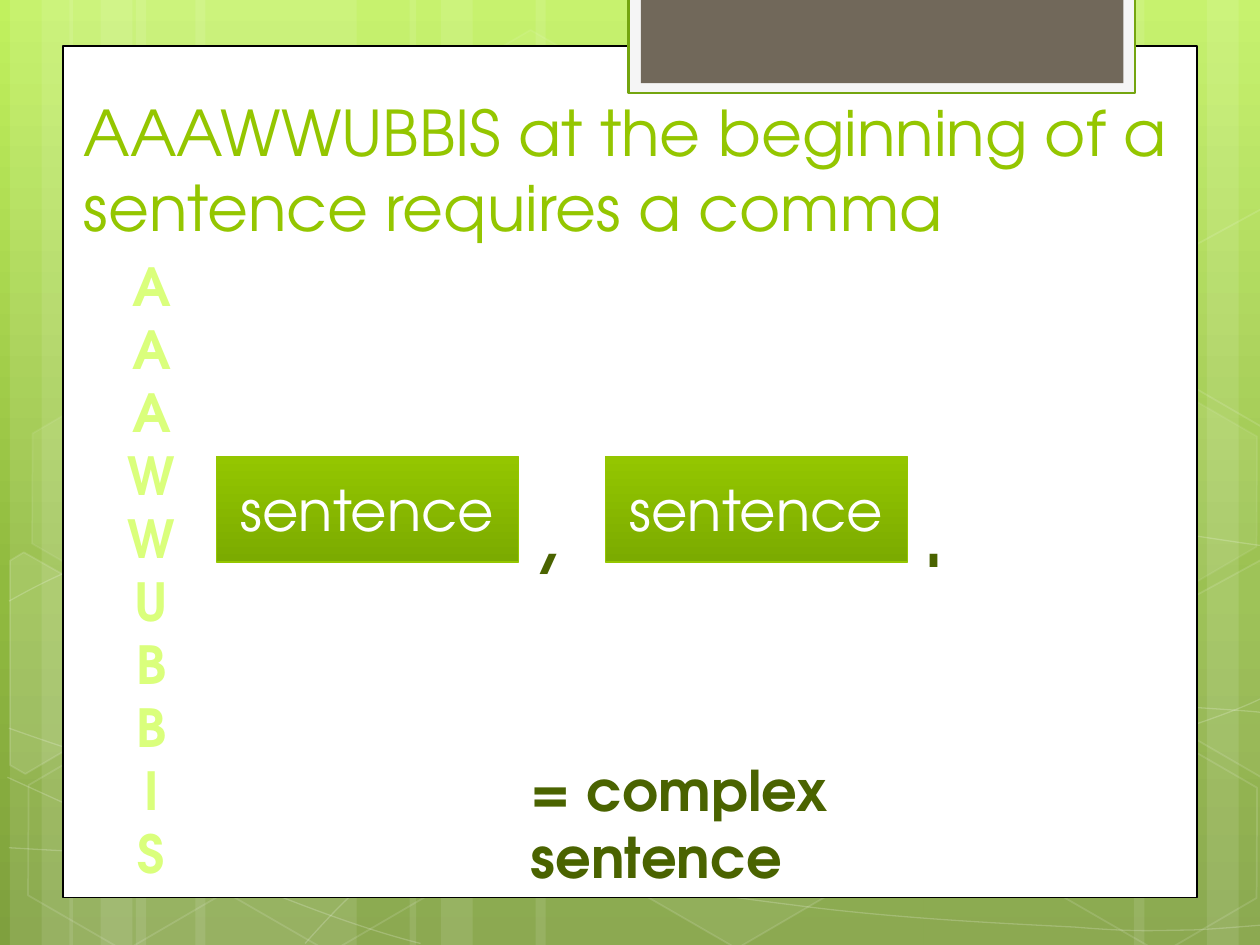
"""Build a grammar slide: AAAWWUBBIS words that open a complex sentence."""
from copy import deepcopy
from math import cos, radians, sin

from lxml.etree import SubElement
from pptx import Presentation
from pptx.dml.color import RGBColor
from pptx.enum.shapes import MSO_SHAPE
from pptx.enum.text import MSO_ANCHOR, PP_ALIGN
from pptx.oxml.ns import qn
from pptx.util import Cm, Pt

TITLE = "AAAWWUBBIS at the beginning of a sentence requires a comma"
ACRONYM = "AAAWWUBBIS"
CLAUSES = [("sentence", ","), ("sentence", ".")]
RESULT = "= complex sentence"

FONT = "TeX Gyre Adventor"
WHITE = RGBColor(0xFF, 0xFF, 0xFF)
BLACK = RGBColor(0x00, 0x00, 0x00)
GREEN = RGBColor(0x94, 0xC6, 0x00)
DEEP_GREEN = RGBColor(0x7B, 0xAB, 0x00)
DARK_GREEN = RGBColor(0x4A, 0x63, 0x00)
PALE_GREEN = RGBColor(0xDA, 0xFF, 0x7C)
TAB_EDGE = RGBColor(0x74, 0xA5, 0x0F)
TAB_PAPER = RGBColor(0xF5, 0xF5, 0xF5)
TAB_BROWN = RGBColor(0x71, 0x68, 0x5A)
BACKDROP = [(0, RGBColor(0xC1, 0xF1, 0x5E)), (0.62, RGBColor(0x90, 0xBA, 0x3F)),
            (1, RGBColor(0x7F, 0xA0, 0x3E))]
BUTTON = [(0, GREEN), (1, DEEP_GREEN)]

SLIDE_WIDTH, SLIDE_HEIGHT = 25.4, 19.05
TILT = 30
STRIPES = [(2.74, 4.45), (0.2, 1.27), (0.84, 2.11), (3.94, 4.45), (1.4, 1.27), (2.03, 2.11),
           (18.62, 4.45), (24.33, 1.27), (22.86, 2.11), (10.8, 7.82), (8.26, 1.27), (8.89, 2.11)]
CURVES = [
    [(0.18, 17.09), (1.55, 17.17), (2.92, 17.25), (4.83, 17.22), (6.73, 17.2), (9.09, 17.15),
     (11.63, 16.89), (14.17, 16.64), (17.78, 16.15), (20.12, 15.67), (22.43, 15.19),
     (24.82, 14.43), (25.58, 14)],
    [(0.18, 12.12), (0.91, 11.71), (1.65, 11.33), (3.07, 10.95), (4.52, 10.57), (6.58, 10.01),
     (8.81, 9.83), (11.07, 9.65), (13.82, 9.63), (16.61, 9.83), (19.41, 10.03),
     (24.05, 10.82), (25.58, 11.02)],
    [(0.15, 15.67), (3.23, 17.07), (6.27, 18.47), (8.48, 19.02)],
    [(0.18, 14.68), (0.97, 14.96), (1.78, 15.24), (3.25, 15.65), (4.72, 16.03), (6.93, 16.66),
     (9.07, 17.09), (11.18, 17.53), (13.84, 17.98), (15.95, 18.24), (18.06, 18.52),
     (20.32, 18.62), (21.67, 18.69), (22.99, 18.8), (23.34, 18.75), (24, 18.75),
     (24.66, 18.72), (25.12, 18.67), (25.58, 18.64)],
    [(6.15, 19.02), (6.6, 18.52), (7.06, 18.01), (7.67, 17.55), (8.28, 17.09), (9.14, 16.59),
     (9.86, 16.23), (10.57, 15.88), (11, 15.72), (11.94, 15.47), (12.85, 15.21),
     (14.55, 14.86), (15.44, 14.68), (16.36, 14.5), (16.48, 14.5), (17.27, 14.45),
     (18.06, 14.38), (19.3, 14.3), (20.17, 14.27), (21.06, 14.25), (22.5, 14.27),
     (22.5, 14.27), (23.07, 14.27), (23.64, 14.27), (24.21, 14.27), (24.66, 14.3),
     (25.1, 14.33), (25.32, 14.35), (25.55, 14.38), (25.48, 14.35), (25.55, 14.38)],
]
HEXAGONS = [(8.48, 0.91, 4, 8), (12.62, 14.96, 6, 12), (0.28, 15.01, 0, 12),
            (0.36, 7.92, 7, 8), (4.42, 15.04, 0, 12), (19.13, 11.51, 10, 12),
            (21.18, 15.06, 0, 12), (21.18, 7.98, 7, 8)]
LEFT_CUT = [(0.2, 11.3), (0.48, 11.13), (2.44, 12.24), (2.41, 14.48), (0.51, 15.6), (0.2, 15.42)]
RIGHT_CUT = [(23.52, 12.32), (25.43, 11.28), (25.63, 11.33), (25.63, 15.57), (25.45, 15.67),
             (23.52, 14.55)]
CUT_HEXAGONS = [(LEFT_CUT, (0.91, 13.59), 0, 10), (RIGHT_CUT, (25.02, 13.21), 0, 4),
                (RIGHT_CUT, (25.02, 13.21), -7.07, 0)]


def glaze(fill, owner, opacity):
    """Fill with white of the given opacity in percent."""
    if not opacity:
        fill.background()
        return
    fill.solid()
    fill.fore_color.rgb = WHITE
    color = owner.xpath("./a:solidFill/a:srgbClr")[0]
    SubElement(color, qn("a:alpha")).set("val", str(opacity * 1000))


def glaze_shape(shape, opacity, line_opacity=0, line_width=1):
    shape.shadow.inherit = False
    properties = shape.element.spPr
    glaze(shape.fill, properties, opacity)
    shape.line.width = Pt(line_width)
    glaze(shape.line.fill, properties.xpath("./a:ln")[0], line_opacity)


def shade(fill, owner, stops):
    """Fill with a gradient that runs from top to bottom."""
    fill.gradient()
    fill.gradient_angle = 270
    stop_list = owner.xpath(".//a:gsLst")[0]
    while len(stop_list) < len(stops):
        stop_list.append(deepcopy(stop_list[0]))
    for stop, (position, color) in zip(fill.gradient_stops, stops):
        stop.position = position
        stop.color.rgb = color


def add_block(slide, box, color=None, edge=None, edge_width=0.75, kind=MSO_SHAPE.RECTANGLE):
    block = slide.shapes.add_shape(kind, *map(Cm, box))
    block.shadow.inherit = False
    if color is not None:
        block.fill.solid()
        block.fill.fore_color.rgb = color
    if edge is None:
        block.line.fill.background()
    else:
        block.line.color.rgb = edge
        block.line.width = Pt(edge_width)
    return block


def add_outline(slide, points, close):
    start, *others = [(Cm(x), Cm(y)) for x, y in points]
    builder = slide.shapes.build_freeform(*start)
    builder.add_line_segments(others, close=close)
    return builder.convert_to_shape()


def add_curve(slide, knots):
    """Draw a chain of cubic Bezier curves through every third knot."""
    curve = add_outline(slide, knots, False)
    outline = curve.element.xpath(".//a:path")[0]
    lines = outline.xpath("./a:lnTo")
    for first in range(0, len(lines), 3):
        bend = SubElement(outline, qn("a:cubicBezTo"))
        for line in lines[first:first + 3]:
            bend.append(line[0])
            outline.remove(line)
    return curve


def add_cut_hexagon(slide, corners, center, shift):
    """Draw the upright outline, then tilt it so its corners land in place."""
    cx, cy = center
    c, s = cos(radians(TILT)), sin(radians(TILT))
    upright = [(cx + (x - cx) * c + (y - cy) * s, cy + shift - (x - cx) * s + (y - cy) * c)
               for x, y in corners]
    hexagon = add_outline(slide, upright, True)
    hexagon.rotation = TILT
    return hexagon


def write(shape, lines, size, color, bold=False, align=PP_ALIGN.LEFT, anchor=MSO_ANCHOR.TOP):
    frame = shape.text_frame
    frame.word_wrap = True
    frame.vertical_anchor = anchor
    frame.text = "\n".join(lines)
    for paragraph in frame.paragraphs:
        paragraph.alignment = align
        paragraph.font.name = FONT
        paragraph.font.size = Pt(size)
        paragraph.font.bold = bold
        paragraph.font.color.rgb = color


def add_text(slide, box, lines, size, color, **style):
    write(slide.shapes.add_textbox(*map(Cm, box)), lines, size, color, **style)


def decorate(slide):
    shade(slide.background.fill, slide.element, BACKDROP)
    for left, width in STRIPES:
        glaze_shape(add_block(slide, (left, 0, width, SLIDE_HEIGHT)), 10)
    for knots in CURVES:
        glaze_shape(add_curve(slide, knots), 0, 20, 0.75)
    for left, top, opacity, line_opacity in HEXAGONS:
        hexagon = add_block(slide, (left, top, 4.45, 3.86), kind=MSO_SHAPE.HEXAGON)
        hexagon.adjustments[0] = 0.285
        hexagon.adjustments[1] = 1.155
        hexagon.rotation = TILT
        glaze_shape(hexagon, opacity, line_opacity)
    for corners, center, shift, opacity in CUT_HEXAGONS:
        glaze_shape(add_cut_hexagon(slide, corners, center, shift), opacity, 12)
    add_block(slide, (1.27, 0.93, 22.86, 17.17), WHITE, BLACK)
    add_block(slide, (12.67, -0.05, 10.21, 1.93), TAB_PAPER, TAB_EDGE, 1.25)
    add_block(slide, (12.92, -0.05, 9.73, 1.73), TAB_BROWN)


def add_lesson(slide):
    add_text(slide, (1.44, 1.87, 23.96, 3.18), [TITLE], 36, GREEN, anchor=MSO_ANCHOR.BOTTOM)
    add_text(slide, (2.32, 5, 1.47, 13.08), ACRONYM, 30, PALE_GREEN, bold=True,
             align=PP_ALIGN.CENTER)
    top, width, pitch = 9.2, 6.08, 7.84
    for index, (clause, mark) in enumerate(CLAUSES):
        left = 4.37 + index * pitch
        button = add_block(slide, (left, top, width, 2.13), edge=GREEN)
        shade(button.fill, button.element, BUTTON)
        write(button, [clause], 32, WHITE, align=PP_ALIGN.CENTER, anchor=MSO_ANCHOR.MIDDLE)
        add_text(slide, (left + width, top, 1.09, 2.82), [mark], 60, DARK_GREEN)
    add_text(slide, (10.45, 15.11, 11.88, 1.63), [RESULT], 32, DARK_GREEN, bold=True)


def main():
    deck = Presentation()
    deck.slide_width, deck.slide_height = Cm(SLIDE_WIDTH), Cm(SLIDE_HEIGHT)
    slide = deck.slides.add_slide(deck.slide_layouts[6])
    decorate(slide)
    add_lesson(slide)
    deck.save("out.pptx")


if __name__ == "__main__":
    main()
